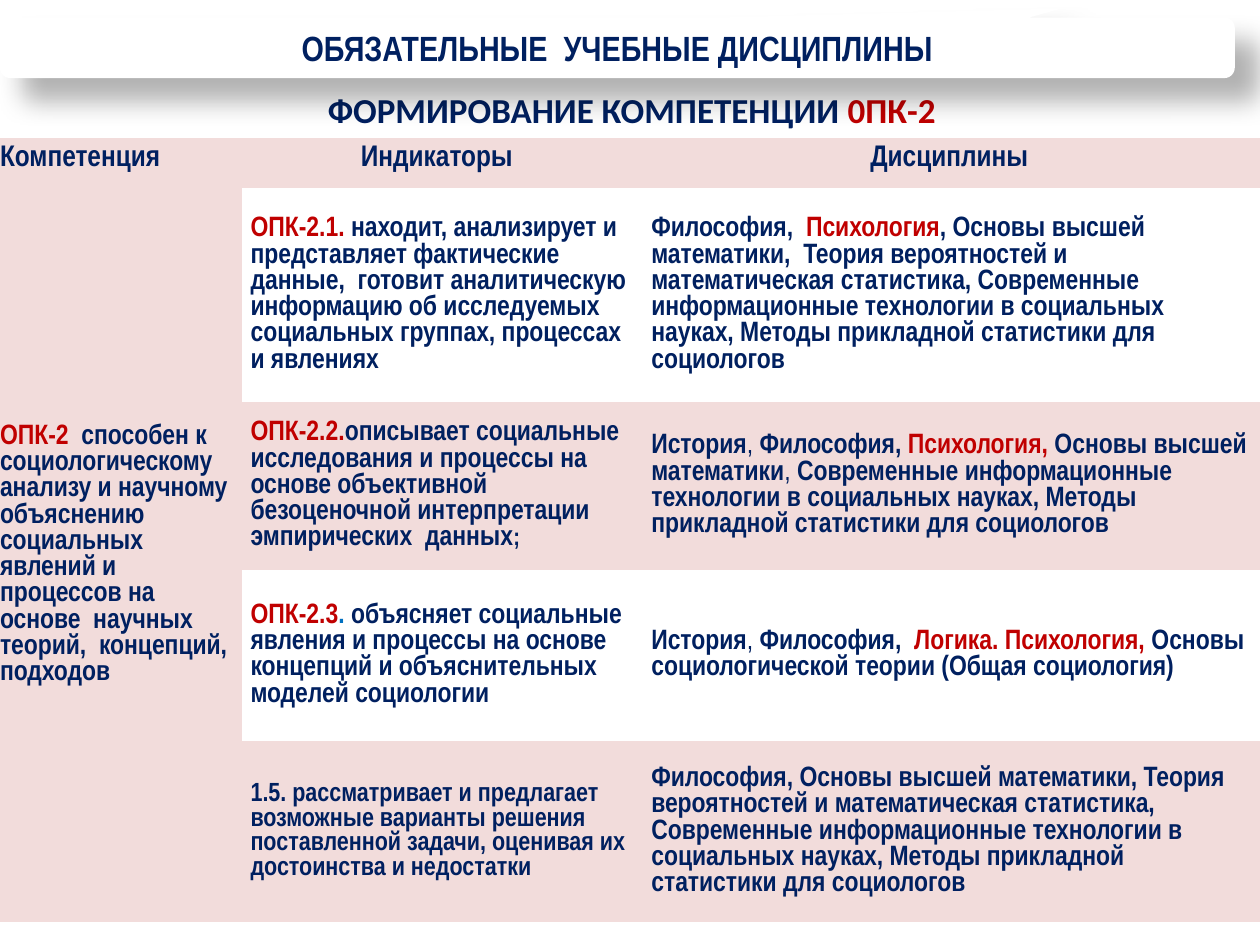
"""Build a slide that maps one competence to its indicators and required courses."""
from dataclasses import dataclass
from typing import Any

import pptx
import pptx.dml.color
import pptx.enum.shapes
import pptx.enum.text
import pptx.oxml
import pptx.oxml.ns
import pptx.util

Pt = pptx.util.Pt
Align = pptx.enum.text.PP_ALIGN
Anchor = pptx.enum.text.MSO_ANCHOR

NAVY, RED, BLUE = "002060", "C00000", "0070C0"
PINK, WHITE = "F2DCDB", "FFFFFF"
NARROW = "Arial Narrow"
PLAIN_TABLE = "{2D5ABB26-0587-4C30-8999-92F81FD0307C}"
COLUMN_WIDTHS = (145.4, 226.8, 355)
ROW_HEIGHTS = (28.5, 122.4, 95.8, 97.9, 103.5)
SHADOW = (
    f'<a:effectLst {pptx.oxml.ns.nsdecls("a")}>'
    f'<a:outerShdw blurRad="{Pt(15)}" dist="{Pt(18)}" dir="2700000" algn="tl" rotWithShape="0">'
    '<a:srgbClr val="000000"><a:alpha val="30000"/></a:srgbClr>'
    "</a:outerShdw></a:effectLst>"
)


@dataclass(frozen=True)
class Span:
    """A stretch of text with one format."""
    text: str
    color: str = NAVY
    size: float = 16
    bold: bool = True
    font: str = NARROW


@dataclass(frozen=True)
class Entry:
    """The content and format of one table cell."""
    row: int
    column: int
    spans: tuple[Span, ...]
    fill: str = PINK
    align: Any = Align.LEFT
    anchor: Any = Anchor.MIDDLE


COMMA = Span(", ", bold=False)
METHODS = (
    "Современные информационные технологии в социальных науках, "
    "Методы прикладной статистики для социологов"
)
STATISTICS = "Теория вероятностей и математическая статистика, "

ENTRIES = (
    Entry(0, 0, (Span("Компетенция", size=17),), anchor=Anchor.TOP),
    Entry(0, 1, (Span("Индикаторы ", size=17),), align=Align.CENTER, anchor=Anchor.TOP),
    Entry(0, 2, (Span("Дисциплины", size=17),), align=Align.CENTER, anchor=Anchor.TOP),
    Entry(1, 0, (
        Span("ОПК-2  ", RED),
        Span("способен к социологическому анализу и научному объяснению социальных явлений "
             "и процессов на основе  научных теорий,  концепций, подходов"),
    )),
    Entry(1, 1, (
        Span("ОПК-2.1. ", RED),
        Span("находит, анализирует и представляет фактические данные,  готовит аналитическую "
             "информацию об исследуемых социальных группах, процессах и явлениях"),
    ), WHITE),
    Entry(1, 2, (
        Span("Философия,  "),
        Span("Психология", RED),
        Span(", Основы высшей математики,  " + STATISTICS + METHODS),
    ), WHITE),
    Entry(2, 1, (
        Span("ОПК-2.2.", RED),
        Span("описывает социальные исследования и процессы на основе объективной "
             "безоценочной интерпретации эмпирических  данных"),
        Span(";", size=14),
    )),
    Entry(2, 2, (
        Span("История"), COMMA, Span("Философия, "),
        Span("Психология, ", RED),
        Span("Основы высшей математики"), COMMA, Span(METHODS),
    )),
    Entry(3, 1, (
        Span("ОПК-2.3", RED),
        Span(". ", BLUE),
        Span("объясняет социальные явления и процессы на основе концепций "
             "и объяснительных моделей социологии"),
    ), WHITE),
    Entry(3, 2, (
        Span("История"), COMMA, Span("Философия,  "),
        Span("Логика. Психология, ", RED),
        Span("Основы социологической теории (Общая социология)"),
    ), WHITE),
    Entry(4, 1, (
        Span("1.5. рассматривает и предлагает возможные варианты решения поставленной задачи, "
             "оценивая их достоинства и недостатки", size=15),
    )),
    Entry(4, 2, (Span("Философия, Основы высшей математики, " + STATISTICS + METHODS),)),
)


def rgb(color: str) -> pptx.dml.color.RGBColor:
    """Turn a hex string into a colour."""
    return pptx.dml.color.RGBColor.from_string(color)


def apply(target: Any, values: dict[str, Any]) -> None:
    """Set each named attribute of the target."""
    for name, value in values.items():
        setattr(target, name, value)


def paint(target: Any, color: str) -> None:
    """Fill a shape or cell with one colour."""
    target.fill.solid()
    target.fill.fore_color.rgb = rgb(color)


def write(frame: Any, spans: tuple[Span, ...], align: Any) -> None:
    """Write formatted spans into the first paragraph of a text frame."""
    para = frame.paragraphs[0]
    para.alignment = align
    for span in spans:
        run = para.add_run()
        run.text = span.text
        apply(run.font, {"name": span.font, "size": Pt(span.size), "bold": span.bold})
        run.font.color.rgb = rgb(span.color)


def add_banner(page: Any) -> None:
    """Draw the white callout with a soft shadow across the top."""
    banner = page.shapes.add_shape(
        pptx.enum.shapes.MSO_SHAPE.ROUNDED_RECTANGULAR_CALLOUT, 0, Pt(10), Pt(705.6), Pt(34.6))
    for index, value in enumerate((0.36, -0.65, 0.17)):
        banner.adjustments[index] = value
    paint(banner, WHITE)
    banner.line.fill.background()
    banner.element.spPr.append(pptx.oxml.parse_xml(SHADOW))
    apply(banner.text_frame, {"word_wrap": True, "vertical_anchor": Anchor.MIDDLE})
    write(banner.text_frame, (Span("ОБЯЗАТЕЛЬНЫЕ  УЧЕБНЫЕ ДИСЦИПЛИНЫ", size=20),), Align.CENTER)


def set_title(page: Any) -> None:
    """Place and fill the title that names the competence."""
    title = page.shapes.title
    apply(title, {"left": Pt(15.8), "top": Pt(46.8), "width": Pt(690.5), "height": Pt(31.7)})
    apply(title.text_frame, {
        "word_wrap": True,
        "vertical_anchor": Anchor.TOP,
        "auto_size": pptx.enum.text.MSO_AUTO_SIZE.NONE,
    })
    write(title.text_frame, (
        Span("ФОРМИРОВАНИЕ КОМПЕТЕНЦИИ ", size=20, font="Calibri"),
        Span("0ПК-2", RED, 20, font="Calibri"),
    ), Align.CENTER)


def add_competence_table(page: Any) -> None:
    """Draw the table of competence, indicators and courses."""
    frame = page.shapes.add_table(
        len(ROW_HEIGHTS), len(COLUMN_WIDTHS), Pt(-7.2), Pt(79),
        Pt(sum(COLUMN_WIDTHS)), Pt(sum(ROW_HEIGHTS)))
    table = frame.table
    frame.element.find(".//" + pptx.oxml.ns.qn("a:tableStyleId")).text = PLAIN_TABLE
    apply(table, {"first_row": False, "horz_banding": False})
    for column, width in zip(table.columns, COLUMN_WIDTHS):
        column.width = Pt(width)
    for row, height in zip(table.rows, ROW_HEIGHTS):
        row.height = Pt(height)
    table.cell(1, 0).merge(table.cell(len(ROW_HEIGHTS) - 1, 0))
    for entry in ENTRIES:
        cell = table.cell(entry.row, entry.column)
        paint(cell, entry.fill)
        cell.vertical_anchor = entry.anchor
        if entry.row and entry.column == 1:
            apply(cell, {"margin_left": Pt(5), "margin_right": Pt(5),
                         "margin_top": 0, "margin_bottom": 0})
        write(cell.text_frame, entry.spans, entry.align)


def main() -> None:
    """Create the deck and save it."""
    deck = pptx.Presentation()
    apply(deck, {"slide_width": Pt(720), "slide_height": Pt(540)})
    page = deck.slides.add_slide(deck.slide_layouts[5])
    add_banner(page)
    set_title(page)
    add_competence_table(page)
    deck.save("out.pptx")


if __name__ == "__main__":
    main()
